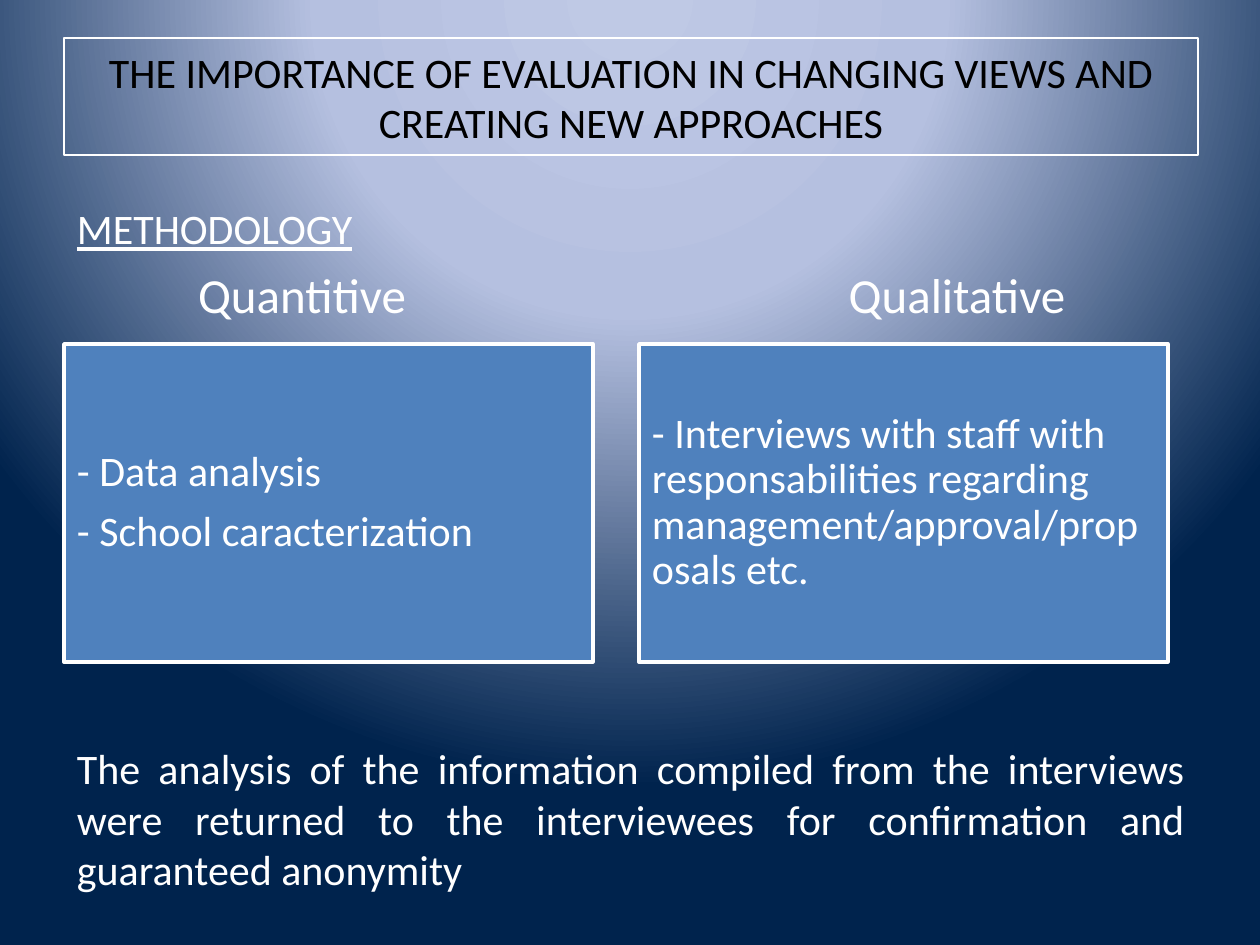
from dataclasses import dataclass
from typing import Optional

from pptx import Presentation
from pptx.dml.color import RGBColor
from pptx.enum.shapes import MSO_SHAPE as Shape
from pptx.enum.text import MSO_ANCHOR as Anchor, PP_ALIGN as Align
from pptx.oxml import parse_xml
from pptx.util import Emu, Pt

EMU_PER_PX = 914400 / 126
FONT = "Calibri"
BLACK = RGBColor(0x00, 0x00, 0x00)
WHITE = RGBColor(0xFF, 0xFF, 0xFF)
BLUE = RGBColor(0x4F, 0x81, 0xBD)
GLOW = RGBColor(0xBF, 0xC9, 0xE5)
PALE = RGBColor(0xB5, 0xC0, 0xE0)
NAVY = RGBColor(0x00, 0x23, 0x4D)
NAMESPACE = "http://schemas.openxmlformats.org/drawingml/2006/main"


@dataclass(frozen=True)
class Frame:
    left: int
    top: int
    width: int
    height: int


@dataclass(frozen=True)
class TextStyle:
    size: int = 24
    color: RGBColor = WHITE
    align: Align = Align.LEFT
    anchor: Anchor = Anchor.TOP
    underline: bool = False
    inset_y: int = 6
    line_spacing: float = 1.0
    space_after: float = 0


def px(length: int) -> Emu:
    return Emu(round(length * EMU_PER_PX))


def place(frame: Frame) -> tuple:
    return tuple(map(px, (frame.left, frame.top, frame.width, frame.height)))


def write(shape, lines: list[str], style: TextStyle) -> None:
    text = shape.text_frame
    text.word_wrap = True
    text.vertical_anchor = style.anchor
    text.margin_left = text.margin_right = px(13)
    text.margin_top = text.margin_bottom = px(style.inset_y)
    text.text = "\n".join(lines)
    for para in text.paragraphs:
        para.alignment = style.align
        para.line_spacing = style.line_spacing
        para.space_after = Pt(style.space_after)
        font = para.font
        font.name, font.size = FONT, Pt(style.size)
        font.color.rgb = style.color
        font.underline = style.underline


def add_text(page, frame: Frame, line: str, style: TextStyle) -> None:
    write(page.shapes.add_textbox(*place(frame)), [line], style)


def add_box(page, frame: Frame, lines: list[str], style: TextStyle,
            fill: Optional[RGBColor], line_width: float) -> None:
    box = page.shapes.add_shape(Shape.RECTANGLE, *place(frame))
    box.shadow.inherit = False
    if fill is None:
        box.fill.background()
    else:
        box.fill.solid()
        box.fill.fore_color.rgb = fill
    box.line.color.rgb = WHITE
    box.line.width = Pt(line_width)
    write(box, lines, style)


def paint_background(page, stops: list[tuple[int, RGBColor]]) -> None:
    """Radial gradient centred above the slide."""
    page.background.fill.solid()
    properties = page.background._cSld.bg.bgPr
    stop_xml = "".join(
        f'<a:gs pos="{percent * 1000}"><a:srgbClr val="{color}"/></a:gs>'
        for percent, color in stops)
    gradient = parse_xml(
        f'<a:gradFill xmlns:a="{NAMESPACE}" rotWithShape="1">'
        f'<a:gsLst>{stop_xml}</a:gsLst><a:path path="circle">'
        '<a:fillToRect l="50000" t="-80000" r="50000" b="180000"/>'
        '</a:path></a:gradFill>')
    properties.replace(properties[0], gradient)


TITLE = TextStyle(color=BLACK, align=Align.CENTER, anchor=Anchor.MIDDLE)
SECTION = TextStyle(underline=True)
HEADING = TextStyle(size=28, align=Align.CENTER)
CARD = TextStyle(anchor=Anchor.MIDDLE, inset_y=13, line_spacing=0.9, space_after=8.4)
CLOSING = TextStyle(align=Align.JUSTIFY)

LEFT, WIDTH = 64, 1134
CARD_WIDTH, CARD_PITCH = 529, 575
# Heading, heading centre, card lines
METHODS = [
    ("Quantitive", 302, ["- Data analysis", "- School caracterization"]),
    ("Qualitative", 957, ["- Interviews with staff with responsabilities regarding "
                          "management/approval/proposals etc."]),
]


def main() -> None:
    deck = Presentation()
    deck.slide_width, deck.slide_height = px(1260), px(945)
    page = deck.slides.add_slide(deck.slide_layouts[6])
    paint_background(page, [(0, GLOW), (40, PALE), (100, NAVY)])

    # Title and section name
    add_box(page, Frame(LEFT, 38, WIDTH, 117),
            ["THE IMPORTANCE OF EVALUATION IN CHANGING VIEWS AND CREATING NEW APPROACHES"],
            TITLE, None, 0.75)
    add_text(page, Frame(LEFT, 197, WIDTH, 63), "METHODOLOGY", SECTION)

    # Method headings and cards
    for index, (heading, center, lines) in enumerate(METHODS):
        add_text(page, Frame(center - 150, 258, 300, 72), heading, HEADING)
        add_box(page, Frame(LEFT + index * CARD_PITCH, 344, CARD_WIDTH, 318),
                lines, CARD, BLUE, 2)

    # Closing remark
    add_text(page, Frame(LEFT, 737, WIDTH, 166),
             "The analysis of the information compiled from the interviews were returned "
             "to the interviewees for confirmation and guaranteed anonymity", CLOSING)

    deck.save("out.pptx")


if __name__ == "__main__":
    main()
